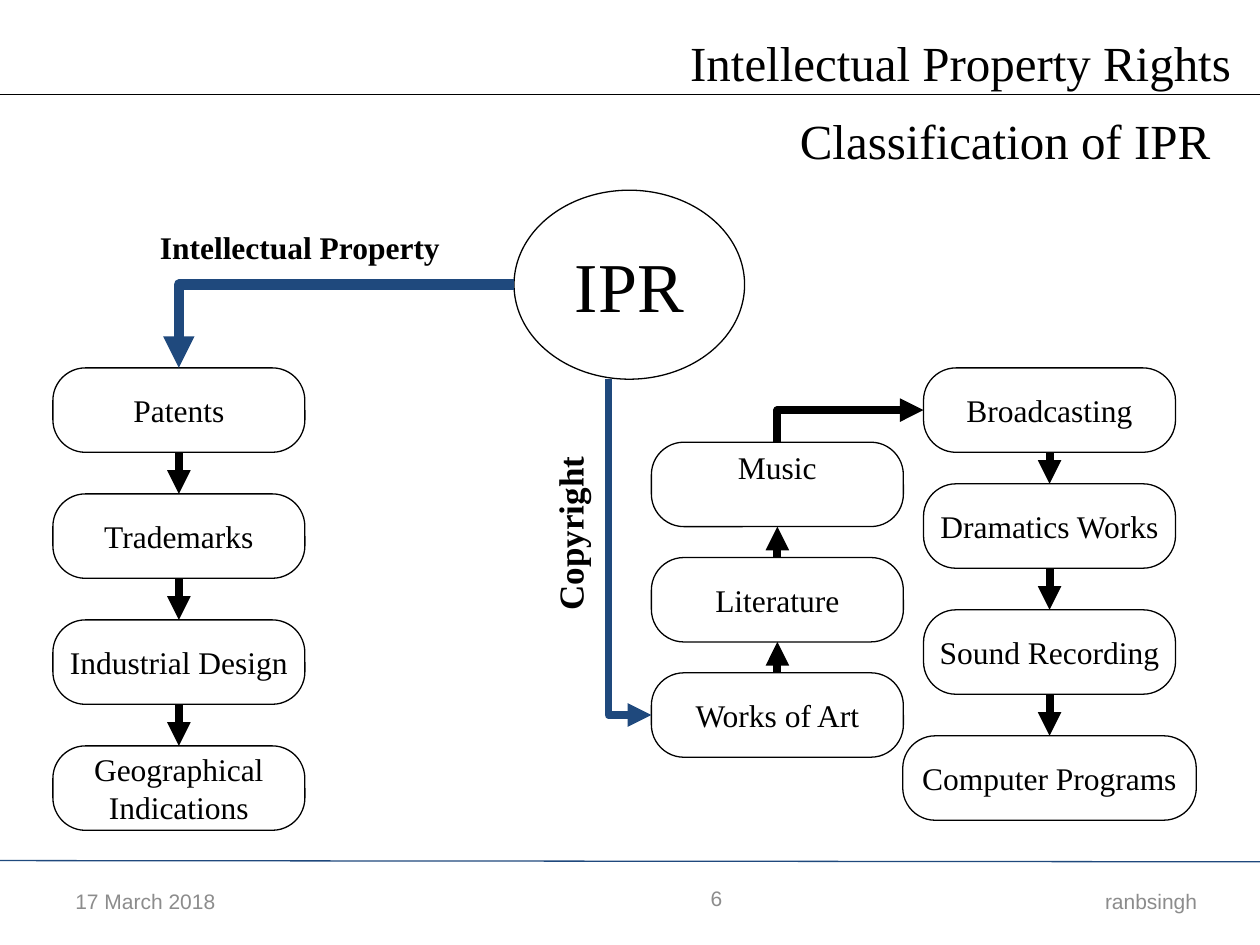
from dataclasses import dataclass
from itertools import pairwise

from lxml.etree import SubElement
from pptx import Presentation
from pptx.dml.color import RGBColor as RGB
from pptx.enum.shapes import MSO_CONNECTOR as CONN, MSO_SHAPE as SHAPE
from pptx.enum.text import MSO_ANCHOR as ANCHOR, PP_ALIGN as ALIGN
from pptx.oxml.ns import qn
from pptx.util import Inches, Pt


@dataclass(frozen=True)
class Theme:
    serif: str = "Times New Roman"
    sans: str = "Arial"
    ink: RGB = RGB(0, 0, 0)
    paper: RGB = RGB(255, 255, 255)
    navy: RGB = RGB(0x1F, 0x49, 0x7D)
    grey: RGB = RGB(0x8C, 0x8C, 0x8C)
    title: int = 28
    hub: int = 40
    vertical: int = 20
    body: int = 18
    footer: int = 12
    thin: float = 0.75
    arrow: float = 4.5
    thick: float = 6


T = Theme()
NODE_W, NODE_H = 2, 0.67


def write(sp, text, size, font=T.serif, color=T.ink, align=ALIGN.LEFT,
          anchor=ANCHOR.TOP, bold=False, wrap=False):
    tf = sp.text_frame
    tf.word_wrap = wrap
    tf.vertical_anchor = anchor
    tf.text = text
    for p in tf.paragraphs:
        p.alignment = align
        p.font.size = Pt(size)
        p.font.name = font
        p.font.bold = bold
        p.font.color.rgb = color
    return tf


def add_text(slide, box, text, size, **style):
    sp = slide.shapes.add_textbox(*map(Inches, box))
    write(sp, text, size, **style)
    return sp


def add_node(slide, kind, box, text, size):
    sp = slide.shapes.add_shape(kind, *map(Inches, box))
    sp.shadow.inherit = False
    sp.fill.solid()
    sp.fill.fore_color.rgb = T.paper
    sp.line.color.rgb = T.ink
    sp.line.width = Pt(T.thin)
    write(sp, text, size, align=ALIGN.CENTER, anchor=ANCHOR.MIDDLE)
    return sp


def add_line(slide, start, end, color=T.ink, width=T.thin, arrow=False):
    c = slide.shapes.add_connector(CONN.STRAIGHT, *map(Inches, (*start, *end)))
    c.line.color.rgb = color
    c.line.width = Pt(width)
    SubElement(c._element.spPr, qn("a:effectLst"))
    if arrow:
        SubElement(c.line._get_or_add_ln(), qn("a:tailEnd"), type="triangle")
    return c


def add_bend(slide, start, end, color, width, vertical_first=False):
    (x1, y1), (x2, y2) = start, end
    if vertical_first:
        cx, cy = (x1 + x2) / 2, (y1 + y2) / 2
        u, v = (y1 - y2) / 2, (x2 - x1) / 2
        start, end = (cx - u, cy - v), (cx + u, cy + v)
    c = add_line(slide, start, end, color, width, arrow=True)
    sp_pr = c._element.spPr
    sp_pr.find(qn("a:prstGeom")).set("prst", "bentConnector2")
    if vertical_first:
        sp_pr.find(qn("a:xfrm")).set("rot", "16200000")


def add_chain(slide, center, steps):
    nodes = []
    for text, top, width in steps:
        box = (center - width / 2, top, width, NODE_H)
        sp = add_node(slide, SHAPE.ROUNDED_RECTANGLE, box, text, T.body)
        sp.adjustments[0] = 0.385
        nodes.append(sp)
    for (_, a, _), (_, b, _) in pairwise(steps):
        y1, y2 = (a + NODE_H, b) if b > a else (a, b + NODE_H)
        add_line(slide, (center, y1), (center, y2), width=T.arrow, arrow=True)
    return nodes


def add_header(slide, box):
    left, top, width, height = box
    right = left + width
    add_line(slide, (left, top + 0.75), (right, top + 0.75))
    add_text(slide, (right - 4.62, top + 0.21, 4.54, 0.57),
             "Intellectual Property Rights", T.title)
    add_text(slide, (right - 3.75, top + 0.83, 3.49, 0.57),
             "Classification of IPR", T.title)


def add_footer(slide, box):
    left, top, width, height = box
    add_line(slide, (left, top), (left + width, top + 0.01), T.navy)
    parts = [
        ("17 March 2018", 0.5, 0.12, 2.33, ALIGN.LEFT),
        ("6", 3.5, 0.1, 2.33, ALIGN.RIGHT),
        ("ranbsingh", 6.75, 0.12, 2.85, ALIGN.RIGHT),
    ]
    for text, x, y, w, align in parts:
        add_text(slide, (left + x, top + y, w, 0.4), text, T.footer, font=T.sans,
                 color=T.grey, align=align, anchor=ANCHOR.MIDDLE, wrap=True)


def add_diagram(slide, box):
    left, top, width, height = box
    hub_x, hub_y, hub_w, hub_h = left + 4.08, top, 1.83, 1.5
    hub_mid, hub_bottom = hub_y + hub_h / 2, hub_y + hub_h
    property_x, works_x, media_x = left + 1.42, left + 6.17, left + 8.33
    row = top + 1.41
    works_top, works_step = top + 3.83, 0.915
    add_node(slide, SHAPE.OVAL, (hub_x, hub_y, hub_w, hub_h), "IPR", T.hub)

    rights = ["Patents", "Trademarks", "Industrial Design", "Geographical\nIndications"]
    add_chain(slide, property_x,
              [(text, row + i, NODE_W) for i, text in enumerate(rights)])
    works = ["Works of Art", "Literature", "Music"]
    music = add_chain(slide, works_x, [(text, works_top - i * works_step, NODE_W)
                                       for i, text in enumerate(works)])[-1]
    music.text_frame.margin_bottom = Inches(0.33)
    add_chain(slide, media_x, [
        ("Broadcasting", row, NODE_W),
        ("Dramatics Works", row + 0.92, NODE_W),
        ("Sound Recording", row + 1.92, NODE_W),
        ("Computer Programs", row + 2.92, 2.33),
    ])

    add_bend(slide, (hub_x, hub_mid), (property_x, row), T.navy, T.thick)
    add_bend(slide, (left + 4.83, hub_bottom),
             (works_x - NODE_W / 2, works_top + NODE_H / 2),
             T.navy, T.arrow, vertical_first=True)
    add_bend(slide, (works_x, works_top - 2 * works_step),
             (media_x - NODE_W / 2, row + NODE_H / 2),
             T.ink, T.arrow, vertical_first=True)

    add_text(slide, (left + 1.17, top + 0.25, 2.45, 0.4),
             "Intellectual Property", T.body, bold=True)
    label = add_text(slide, (left + 3.81, top + 2.5, 1.43, 0.44),
                     "Copyright", T.vertical, bold=True)
    label.rotation = 270


def main():
    prs = Presentation()
    prs.slide_width, prs.slide_height = Inches(10), Inches(7.5)
    slide = prs.slides.add_slide(prs.slide_layouts[6])
    add_header(slide, (0, 0, 10, 1.4))
    add_diagram(slide, (0, 1.51, 10, 5.08))
    add_footer(slide, (0, 6.83, 10, 0.67))
    prs.save("out.pptx")


if __name__ == "__main__":
    main()
